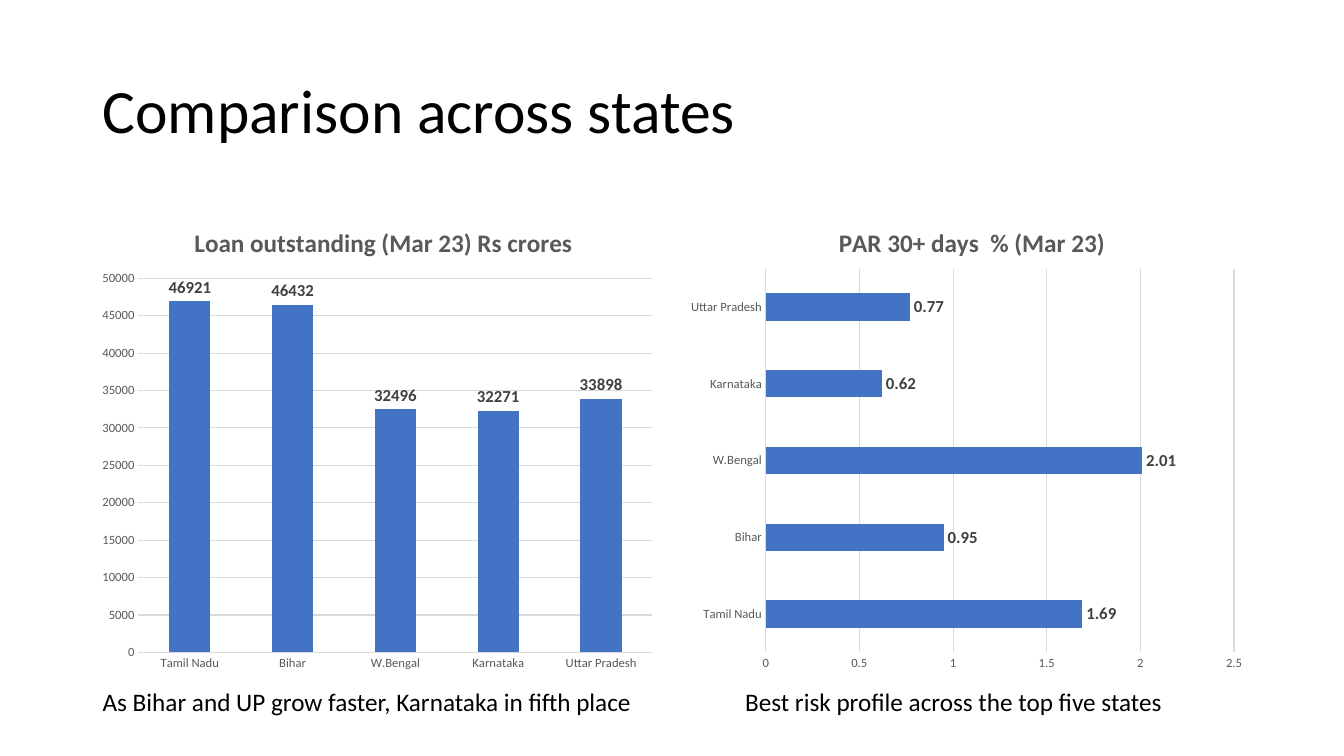
import dataclasses
import typing

import lxml.etree
import pptx
import pptx.chart.data
import pptx.dml.color
import pptx.enum.chart
import pptx.enum.text
import pptx.oxml.ns
import pptx.util

WIDE, HIGH = 13.33, 7.5
FONT = "Calibri"
COLORS = {"text": "000000", "axis": "595959", "label": "404040",
          "grid": "D9D9D9", "bar": "4472C4"}
STATES = ("Tamil Nadu", "Bihar", "W.Bengal", "Karnataka", "Uttar Pradesh")
KINDS = pptx.enum.chart.XL_CHART_TYPE
ANCHORS = pptx.enum.text.MSO_ANCHOR


@dataclasses.dataclass(frozen=True)
class Area:
    """A box given as shares of the slide's size."""
    left: float
    top: float
    width: float
    height: float

    def place(self) -> tuple[int, int, int, int]:
        return (pptx.util.Inches(self.left * WIDE), pptx.util.Inches(self.top * HIGH),
                pptx.util.Inches(self.width * WIDE), pptx.util.Inches(self.height * HIGH))


@dataclasses.dataclass(frozen=True)
class Label:
    text: str
    area: Area
    size: int
    anchor: typing.Any = ANCHORS.TOP
    lead: float = 1.0


@dataclasses.dataclass(frozen=True)
class Graph:
    """A bar chart; head and plot hold shares of the chart's size."""
    title: str
    kind: typing.Any
    area: Area
    values: tuple[float, ...]
    top: float
    step: float
    gap: int
    format: str
    line: bool
    head: dict[str, float]
    plot: dict[str, float]


LEFT, HALF = 0.069, 0.425
RIGHT = 1 - LEFT - HALF
ROW, TALL = 2 / HIGH, 4.76 / HIGH
NOTE = ROW + TALL

LABELS = (
    Label("Comparison across states", Area(LEFT, 0.4 / HIGH, 1 - 2 * LEFT, 1.45 / HIGH),
          44, ANCHORS.MIDDLE, 0.9),
    Label("As Bihar and UP grow faster, Karnataka in fifth place",
          Area(LEFT, NOTE, 0.42, 0.4 / HIGH), 18),
    Label("Best risk profile across the top five states",
          Area(0.547, NOTE, 0.385, 0.4 / HIGH), 18),
)

GRAPHS = (
    Graph("Loan outstanding (Mar 23) Rs crores", KINDS.COLUMN_CLUSTERED,
          Area(LEFT, ROW, HALF, TALL), (46921, 46432, 32496, 32271, 33898),
          50000, 5000, 150, "0", False, {"x": 0.17, "y": 0.04},
          {"x": 0.08, "y": 0.16, "w": 0.9, "h": 0.78}),
    Graph("PAR 30+ days  % (Mar 23)", KINDS.BAR_CLUSTERED,
          Area(RIGHT, ROW, HALF, TALL), (1.69, 0.95, 2.01, 0.62, 0.77),
          2.5, 0.5, 182, "General", True, {"x": 0.27, "y": 0.04},
          {"x": 0.15, "y": 0.14, "w": 0.82, "h": 0.8}),
)


def tint(name: str) -> pptx.dml.color.RGBColor:
    return pptx.dml.color.RGBColor.from_string(COLORS[name])


def style(font: typing.Any, size: int, color: str, bold: bool = False) -> None:
    font.name, font.size, font.bold = FONT, pptx.util.Pt(size), bold
    font.color.rgb = tint(color)


def rule(line: typing.Any) -> None:
    """Give a line the look of the grid."""
    line.color.rgb = tint("grid")
    line.width = pptx.util.Pt(0.75)


def fix(host: typing.Any, spot: int, shares: dict[str, float]) -> None:
    """Pin a chart part with a manual layout, as child number spot."""
    name = pptx.oxml.ns.qn
    for old in host.findall(name("c:layout")):
        host.remove(old)
    layout = lxml.etree.Element(name("c:layout"))
    manual = lxml.etree.SubElement(layout, name("c:manualLayout"))
    if "w" in shares:
        lxml.etree.SubElement(manual, name("c:layoutTarget"), val="inner")
    for key in ("x", "y"):
        lxml.etree.SubElement(manual, name(f"c:{key}Mode"), val="edge")
    for key, share in shares.items():
        lxml.etree.SubElement(manual, name(f"c:{key}"), val=str(share))
    host.insert(spot, layout)


def write(slide: typing.Any, label: Label) -> None:
    frame = slide.shapes.add_textbox(*label.area.place()).text_frame
    frame.word_wrap = True
    frame.vertical_anchor = label.anchor
    line = frame.paragraphs[0]
    line.text = label.text
    line.line_spacing = label.lead
    style(line.font, label.size, "text")


def draw(slide: typing.Any, graph: Graph) -> None:
    data = pptx.chart.data.CategoryChartData(number_format=graph.format)
    data.categories = STATES
    data.add_series("Series 1", graph.values)
    chart = slide.shapes.add_chart(graph.kind, *graph.area.place(), data).chart
    style(chart.font, 10, "text")
    chart.has_legend = False

    head = chart.chart_title
    line = head.text_frame.paragraphs[0]
    line.text = graph.title
    style(line.font, 18, "axis", True)
    head.include_in_layout = False
    fix(head._element, 1, graph.head)

    for axis in (chart.category_axis, chart.value_axis):
        axis.major_tick_mark = axis.minor_tick_mark = pptx.enum.chart.XL_TICK_MARK.NONE
        style(axis.tick_labels.font, 9, "axis")
        axis.format.line.fill.background()
    if graph.line:
        rule(chart.category_axis.format.line)
    scale = chart.value_axis
    scale.minimum_scale, scale.maximum_scale = 0, graph.top
    scale.major_unit = graph.step
    scale.has_major_gridlines = True
    rule(scale.major_gridlines.format.line)

    plot = chart.plots[0]
    plot.gap_width = graph.gap
    plot.vary_by_categories = False
    fill = plot.series[0].format.fill
    fill.solid()
    fill.fore_color.rgb = tint("bar")
    plot.has_data_labels = True
    marks = plot.data_labels
    marks.show_value = True
    marks.position = pptx.enum.chart.XL_LABEL_POSITION.OUTSIDE_END
    style(marks.font, 12, "label", True)
    fix(chart._chartSpace.chart.plotArea, 0, graph.plot)


def main() -> None:
    deck = pptx.Presentation()
    deck.slide_width = pptx.util.Inches(WIDE)
    deck.slide_height = pptx.util.Inches(HIGH)
    slide = deck.slides.add_slide(deck.slide_layouts[6])
    for label in LABELS:
        write(slide, label)
    for graph in GRAPHS:
        draw(slide, graph)
    deck.save("out.pptx")


if __name__ == "__main__":
    main()
